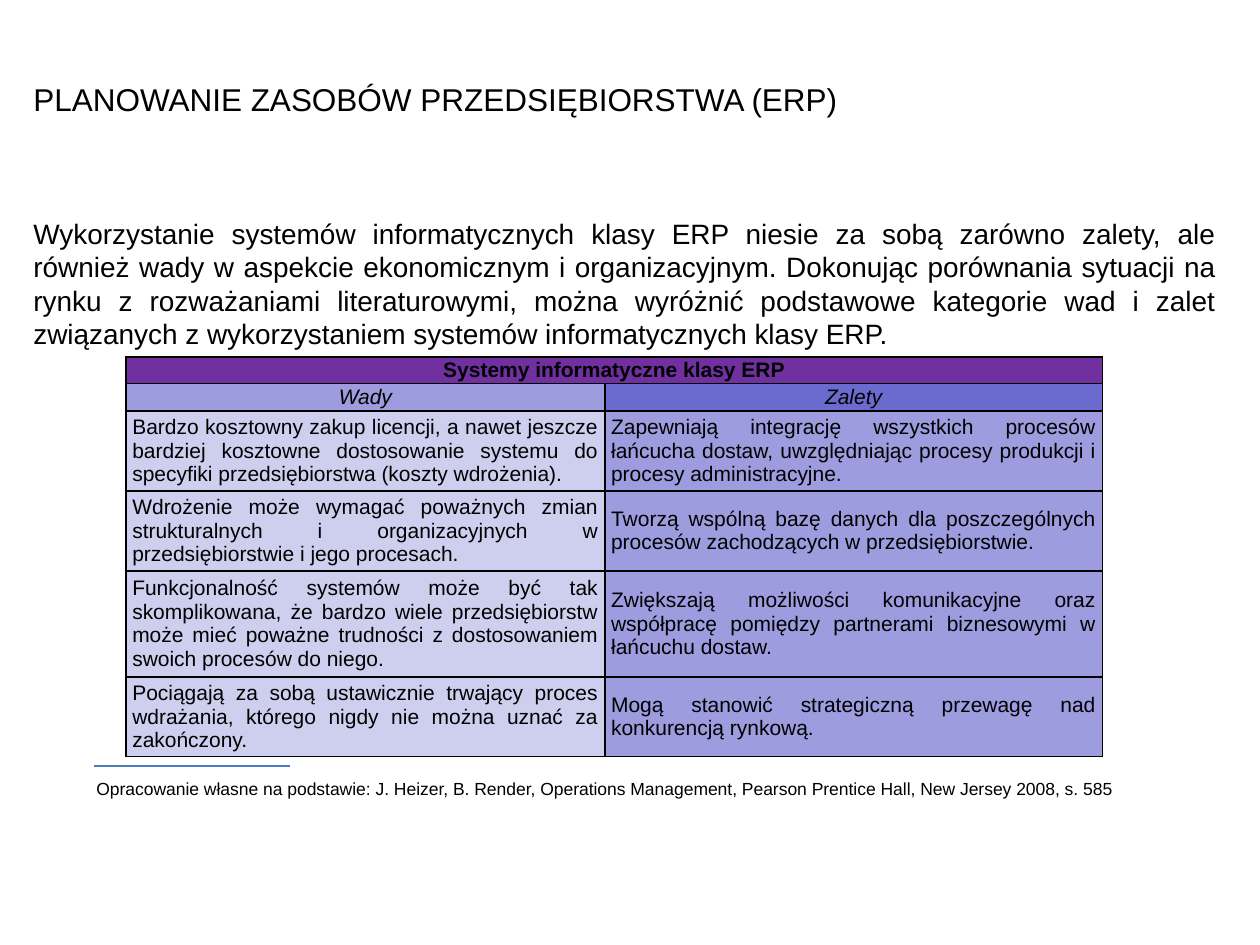
from lxml.etree import SubElement
from pptx import Presentation
from pptx.dml.color import RGBColor
from pptx.enum.shapes import MSO_CONNECTOR
from pptx.enum.text import MSO_ANCHOR, MSO_AUTO_SIZE, PP_ALIGN
from pptx.oxml.ns import qn
from pptx.util import Pt

BLACK = RGBColor(0x00, 0x00, 0x00)
PURPLE = RGBColor(0x70, 0x30, 0xA0)
INDIGO = RGBColor(0x6B, 0x6B, 0xCF)
LAVENDER = RGBColor(0x9C, 0x9C, 0xDF)
PALE = RGBColor(0xCE, 0xCE, 0xEF)
BLUE = RGBColor(0x4B, 0x7E, 0xBC)

TITLE = "PLANOWANIE ZASOBÓW PRZEDSIĘBIORSTWA (ERP)"
INTRO = (
    "Wykorzystanie systemów informatycznych klasy ERP niesie za sobą zarówno "
    "zalety, ale również wady w aspekcie ekonomicznym i organizacyjnym. "
    "Dokonując porównania sytuacji na rynku z rozważaniami literaturowymi, "
    "można wyróżnić podstawowe kategorie wad i zalet związanych z "
    "wykorzystaniem systemów informatycznych klasy ERP."
)
SOURCE = (
    "Opracowanie własne na podstawie: J. Heizer, B. Render, Operations "
    "Management, Pearson Prentice Hall, New Jersey 2008, s. 585"
)
HEADING = "Systemy informatyczne klasy ERP"
COLUMNS = ("Wady", "Zalety")
PAIRS = [
    ("Bardzo kosztowny zakup licencji, a nawet jeszcze bardziej kosztowne "
     "dostosowanie systemu do specyfiki przedsiębiorstwa (koszty wdrożenia).",
     "Zapewniają integrację wszystkich procesów łańcucha dostaw, "
     "uwzględniając procesy produkcji i procesy administracyjne."),
    ("Wdrożenie może wymagać poważnych zmian strukturalnych i "
     "organizacyjnych w przedsiębiorstwie i jego procesach.",
     "Tworzą wspólną bazę danych dla poszczególnych procesów zachodzących "
     "w przedsiębiorstwie."),
    ("Funkcjonalność systemów może być tak skomplikowana, że bardzo wiele "
     "przedsiębiorstw może mieć poważne trudności z dostosowaniem swoich "
     "procesów do niego.",
     "Zwiększają możliwości komunikacyjne oraz współpracę pomiędzy "
     "partnerami biznesowymi w łańcuchu dostaw."),
    ("Pociągają za sobą ustawicznie trwający proces wdrażania, którego "
     "nigdy nie można uznać za zakończony.",
     "Mogą stanowić strategiczną przewagę nad konkurencją rynkową."),
]
ROW_HEIGHTS = (15, 16, 45.6, 45.6, 60.6, 45.6)
COL_WIDTHS = (273.6, 284.4)


def write(tf, text, align, **font):
    p = tf.paragraphs[0]
    p.alignment = align
    r = p.add_run()
    r.text = text
    r.font.color.rgb = BLACK
    for name, value in {"name": "Arial", **font}.items():
        setattr(r.font, name, value)


def add_text(s, box, text, size, align):
    tf = s.shapes.add_textbox(*map(Pt, box)).text_frame
    tf.word_wrap = True
    tf.auto_size = MSO_AUTO_SIZE.SHAPE_TO_FIT_TEXT
    write(tf, text, align, size=Pt(size))


def set_borders(cell):
    tcPr = cell._tc.get_or_add_tcPr()
    for i, side in enumerate(("lnL", "lnR", "lnT", "lnB")):
        ln = SubElement(tcPr, qn(f"a:{side}"), w=str(Pt(1)))
        fill = SubElement(ln, qn("a:solidFill"))
        SubElement(fill, qn("a:srgbClr"), val=str(BLACK))
        tcPr.insert(i, ln)


def fill_cell(cell, text, color, align, **font):
    layout = {
        "vertical_anchor": MSO_ANCHOR.MIDDLE,
        "margin_left": Pt(3.6),
        "margin_right": Pt(3.6),
        "margin_top": 0,
        "margin_bottom": 0,
    }
    for name, value in layout.items():
        setattr(cell, name, value)
    cell.fill.solid()
    cell.fill.fore_color.rgb = color
    write(cell.text_frame, text, align, size=Pt(12), **font)


def add_comparison(s, left, top):
    table = s.shapes.add_table(
        len(ROW_HEIGHTS), len(COL_WIDTHS), Pt(left), Pt(top),
        Pt(sum(COL_WIDTHS)), Pt(sum(ROW_HEIGHTS)),
    ).table
    for column, width in zip(table.columns, COL_WIDTHS):
        column.width = Pt(width)
    for row, height in zip(table.rows, ROW_HEIGHTS):
        row.height = Pt(height)
    table.cell(0, 0).merge(table.cell(0, 1))
    fill_cell(table.cell(0, 0), HEADING, PURPLE, PP_ALIGN.CENTER, bold=True)
    for c, (name, color) in enumerate(zip(COLUMNS, (LAVENDER, INDIGO))):
        fill_cell(table.cell(1, c), name, color, PP_ALIGN.CENTER,
                  bold=False, italic=True)
    for r, pair in enumerate(PAIRS, start=2):
        for c, (text, color) in enumerate(zip(pair, (PALE, LAVENDER))):
            fill_cell(table.cell(r, c), text, color, PP_ALIGN.JUSTIFY,
                      bold=False)
    for cell in table.iter_cells():
        set_borders(cell)


def add_footnote(s, left, top, width):
    rule = s.shapes.add_connector(
        MSO_CONNECTOR.STRAIGHT, Pt(left + 5.8), Pt(top),
        Pt(left + 118), Pt(top),
    )
    rule.line.color.rgb = BLUE
    rule.line.width = Pt(0.75)
    SubElement(rule._element.spPr, qn("a:effectLst"))
    add_text(s, (left, top + 3, width, 19.4), SOURCE, 10, PP_ALIGN.JUSTIFY)


def main():
    prs = Presentation()
    prs.slide_width, prs.slide_height = Pt(720), Pt(540)
    s = prs.slides.add_slide(prs.slide_layouts[6])
    add_text(s, (12, 42, 582, 29), TITLE, 18, PP_ALIGN.LEFT)
    add_text(s, (12, 120, 690, 85), INTRO, 16, PP_ALIGN.JUSTIFY)
    add_footnote(s, 48, 437.8, 629)
    add_comparison(s, 72, 204)
    prs.save("out.pptx")


if __name__ == "__main__":
    main()
